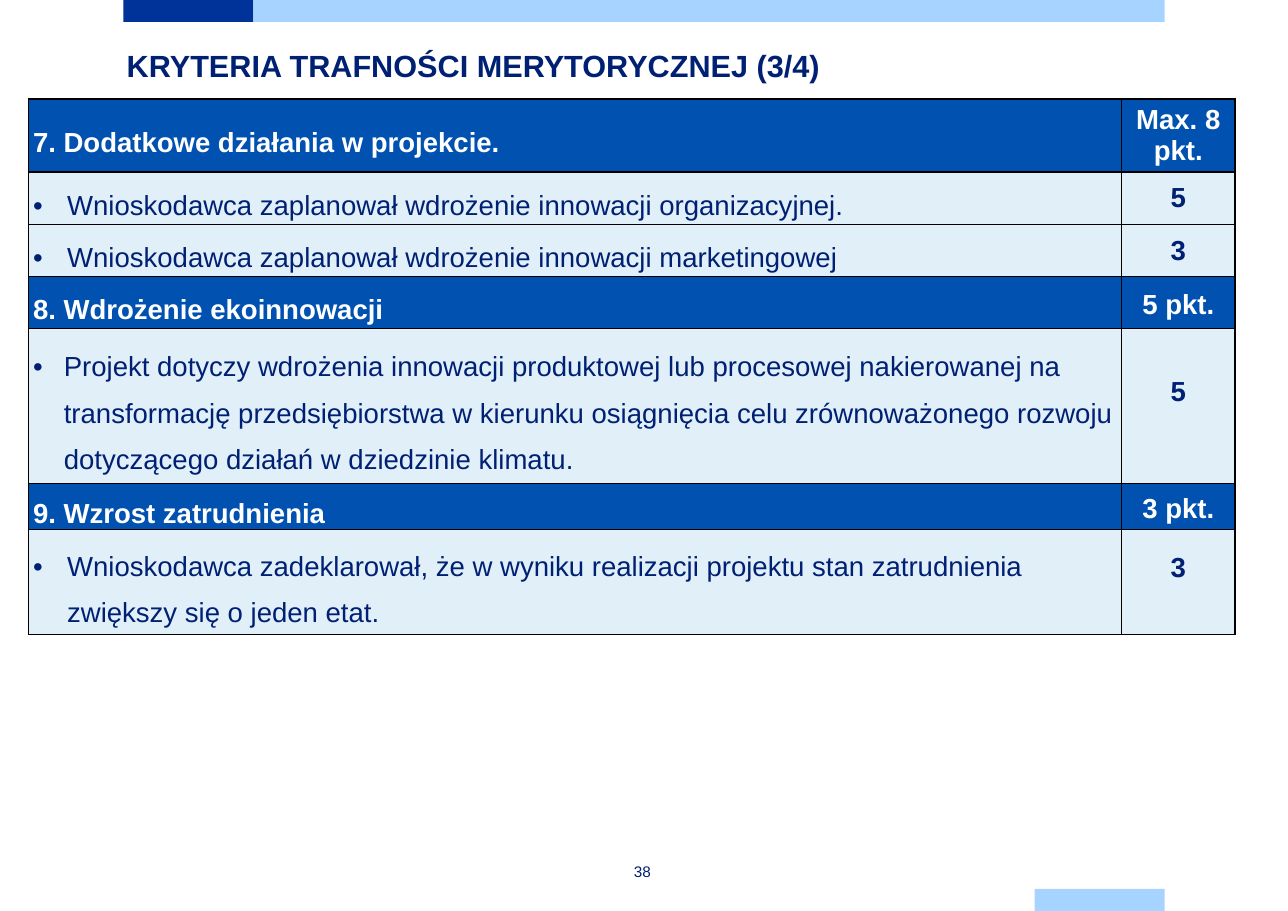
from pptx import Presentation
from pptx.dml.color import RGBColor
from pptx.enum.shapes import MSO_SHAPE as Shape
from pptx.enum.text import MSO_ANCHOR as Anchor, PP_ALIGN as Align
from pptx.oxml import parse_xml
from pptx.oxml.ns import nsdecls
from pptx.util import Inches, Pt

COLORS = {"navy": "002073", "dark": "003399", "light": "A6D3FF",
          "header": "0051B0", "row": "E1EFF9", "white": "FFFFFF", "border": "000000"}


def write(paragraph, text, size, color, bold=False, **layout):
    """Add one run; layout holds paragraph attributes such as alignment."""
    for name, value in layout.items():
        setattr(paragraph, name, value)
    run = paragraph.add_run()
    run.text = text
    for name, value in {"name": "Arial", "size": Pt(size), "bold": bold}.items():
        setattr(run.font, name, value)
    run.font.color.rgb = RGBColor.from_string(COLORS[color])


def set_margins(target, left, top, right, bottom):
    for side, inches in zip(("left", "top", "right", "bottom"), (left, top, right, bottom)):
        setattr(target, f"margin_{side}", Inches(inches))


deck = Presentation()
deck.slide_width, deck.slide_height = Inches(11.69), Inches(8.27)
slide = deck.slides.add_slide(deck.slide_layouts[5])

# Decorative bars share one height and sit on the top and bottom edges
for left, top, width, color in [(1.12, 0, 1.18, "dark"), (2.3, 0, 8.27, "light"),
                                (9.39, 8.07, 1.18, "light")]:
    bar = slide.shapes.add_shape(Shape.RECTANGLE, Inches(left), Inches(top),
                                 Inches(width), Inches(0.2))
    bar.shadow.inherit = False
    bar.fill.solid()
    bar.fill.fore_color.rgb = RGBColor.from_string(COLORS[color])
    bar.line.fill.background()

title = slide.shapes.title
title.left, title.top, title.width, title.height = map(Inches, (1.15, 0.36, 9.45, 0.47))
heading = title.text_frame
heading.vertical_anchor = Anchor.TOP
set_margins(heading, 0, 0, 0, 0)
write(heading.paragraphs[0], "KRYTERIA TRAFNOŚCI MERYTORYCZNEJ (3/4)", 20, "navy", True,
      alignment=Align.LEFT, line_spacing=Pt(28.6))

# Criterion, points, row height, is header, text indent, points spacing, points bottom margin
criteria = [
    ("7. Dodatkowe działania w projekcie.", "Max. 8 pkt.", 0.66, True, 0, 1, 0.05),
    ("Wnioskodawca zaplanował wdrożenie innowacji organizacyjnej.",
     "5", 0.48, False, 0.31, 1, 0.05),
    ("Wnioskodawca zaplanował wdrożenie innowacji marketingowej",
     "3", 0.47, False, 0.31, 1, 0.05),
    ("8. Wdrożenie ekoinnowacji", "5 pkt.", 0.47, True, 0, 1.14, 0.05),
    ("Projekt dotyczy wdrożenia innowacji produktowej lub procesowej nakierowanej na "
     "transformację przedsiębiorstwa w kierunku osiągnięcia celu zrównoważonego rozwoju "
     "dotyczącego działań w dziedzinie klimatu.", "5", 1.41, False, 0.28, 1.14, 0.35),
    ("9. Wzrost zatrudnienia", "3 pkt.", 0.41, True, 0, 1.14, 0.05),
    ("Wnioskodawca zadeklarował, że w wyniku realizacji projektu stan zatrudnienia "
     "zwiększy się o jeden etat.", "3", 0.95, False, 0.31, 1.14, 0.35),
]
column_widths = (9.92, 1.03)
table = slide.shapes.add_table(
    len(criteria), len(column_widths), Inches(0.26), Inches(0.9),
    Inches(sum(column_widths)), Inches(sum(row[2] for row in criteria))).table
table.first_row = table.horz_banding = False
for column, width in zip(table.columns, column_widths):
    column.width = Inches(width)

for row, (criterion, points, height, is_header, indent, spacing, bottom) in zip(table.rows, criteria):
    row.height = Inches(height)
    text_color = "white" if is_header else "navy"
    criterion_cell, points_cell = row.cells
    set_margins(criterion_cell, 0.04, 0, 0.04, 0)
    set_margins(points_cell, 0.1, 0.05, 0.1, bottom)

    paragraph = criterion_cell.text_frame.paragraphs[0]
    if not is_header:
        props = paragraph._p.get_or_add_pPr()
        props.set("marL", str(Inches(indent)))
        props.set("indent", str(-Inches(indent)))
        props.append(parse_xml(f'<a:buFont {nsdecls("a")} typeface="Arial"/>'))
        props.append(parse_xml(f'<a:buChar {nsdecls("a")} char="•"/>'))
        paragraph.space_after = Pt(6)
    write(paragraph, criterion, 18, text_color, is_header, line_spacing=1.5)
    write(points_cell.text_frame.paragraphs[0], points, 18, text_color, True,
          alignment=Align.CENTER, line_spacing=float(spacing))

    for cell in row.cells:
        cell.vertical_anchor = Anchor.MIDDLE
        cell.fill.solid()
        cell.fill.fore_color.rgb = RGBColor.from_string(COLORS["header" if is_header else "row"])
        for position, edge in enumerate(("lnL", "lnR", "lnT", "lnB")):
            cell._tc.tcPr.insert(position, parse_xml(
                f'<a:{edge} {nsdecls("a")} w="{Pt(1)}"><a:solidFill>'
                f'<a:srgbClr val="{COLORS["border"]}"/></a:solidFill></a:{edge}>'))

page_number = slide.shapes.add_textbox(*map(Inches, (5.24, 7.81, 1.18, 0.2))).text_frame
page_number.word_wrap = True
page_number.vertical_anchor = Anchor.MIDDLE
set_margins(page_number, 0, 0.08, 0, 0.08)
write(page_number.paragraphs[0], "38", 10, "navy", alignment=Align.CENTER)

deck.save("out.pptx")
